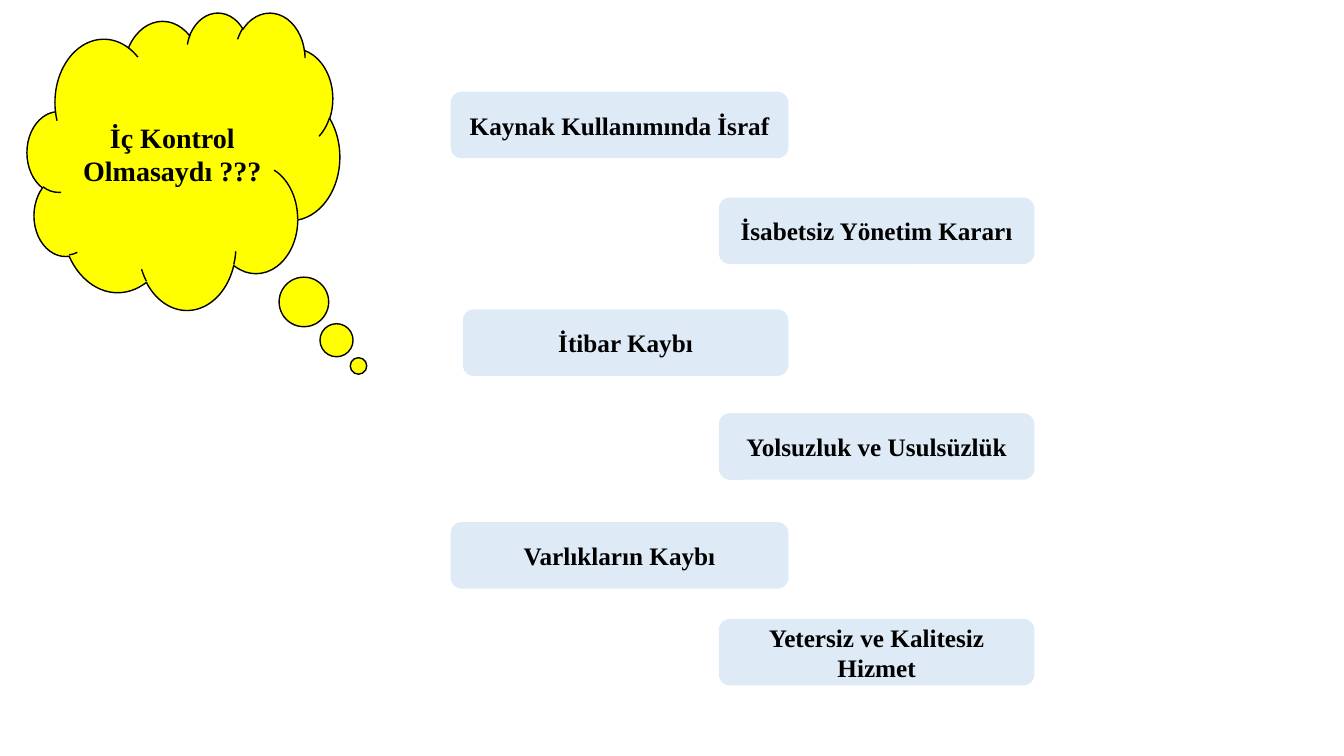
from pptx import Presentation
from pptx.dml.color import RGBColor
from pptx.enum.shapes import MSO_SHAPE
from pptx.enum.text import MSO_ANCHOR, PP_ALIGN
from pptx.util import Pt

PX = 9144
FONT = "Times New Roman"
COLORS = {"cloud": "FFFF00", "risk": "DEEBF7", "ink": "000000"}
RISK_HEIGHT = 66
LEFT_WIDTH = 335
RIGHT_WIDTH = 313
RISKS = [
    ("Kaynak Kullanımında İsraf", 0, 0, LEFT_WIDTH),
    ("İsabetsiz Yönetim Kararı", 266, 105, RIGHT_WIDTH),
    ("İtibar Kaybı", 12, 216, LEFT_WIDTH - 12),
    ("Yolsuzluk ve Usulsüzlük", 266, 319, RIGHT_WIDTH),
    ("Varlıkların Kaybı", 0, 427, LEFT_WIDTH),
    ("Yetersiz ve Kalitesiz Hizmet", 266, 523, RIGHT_WIDTH),
]


def color(name):
    return RGBColor.from_string(COLORS[name])


def add_label(slide, kind, box, text, size, fill):
    sp = slide.shapes.add_shape(kind, *(n * PX for n in box))
    sp.shadow.inherit = False
    sp.fill.solid()
    sp.fill.fore_color.rgb = color(fill)
    sp.line.fill.background()
    tf = sp.text_frame
    tf.word_wrap = True
    tf.vertical_anchor = MSO_ANCHOR.MIDDLE
    p = tf.paragraphs[0]
    p.text = text
    p.alignment = PP_ALIGN.CENTER
    font = p.runs[0].font
    font.name = FONT
    font.size = Pt(size)
    font.bold = True
    font.color.rgb = color("ink")
    return sp


def add_question(slide, box):
    sp = add_label(slide, MSO_SHAPE.CLOUD_CALLOUT, box,
                   "İç Kontrol Olmasaydı ???", 20, "cloud")
    sp.adjustments[0] = 0.56
    sp.adjustments[1] = 0.69
    sp.line.color.rgb = color("ink")
    sp.line.width = Pt(1)


def add_risks(slide, left, top):
    for text, dx, dy, width in RISKS:
        add_label(slide, MSO_SHAPE.FLOWCHART_ALTERNATE_PROCESS,
                  (left + dx, top + dy, width, RISK_HEIGHT), text, 18, "risk")


def main():
    prs = Presentation()
    prs.slide_width = 1333 * PX
    prs.slide_height = 750 * PX
    slide = prs.slides.add_slide(prs.slide_layouts[6])
    add_question(slide, (27, 12, 310, 295))
    add_risks(slide, 447, 91)
    prs.save("out.pptx")


if __name__ == "__main__":
    main()
